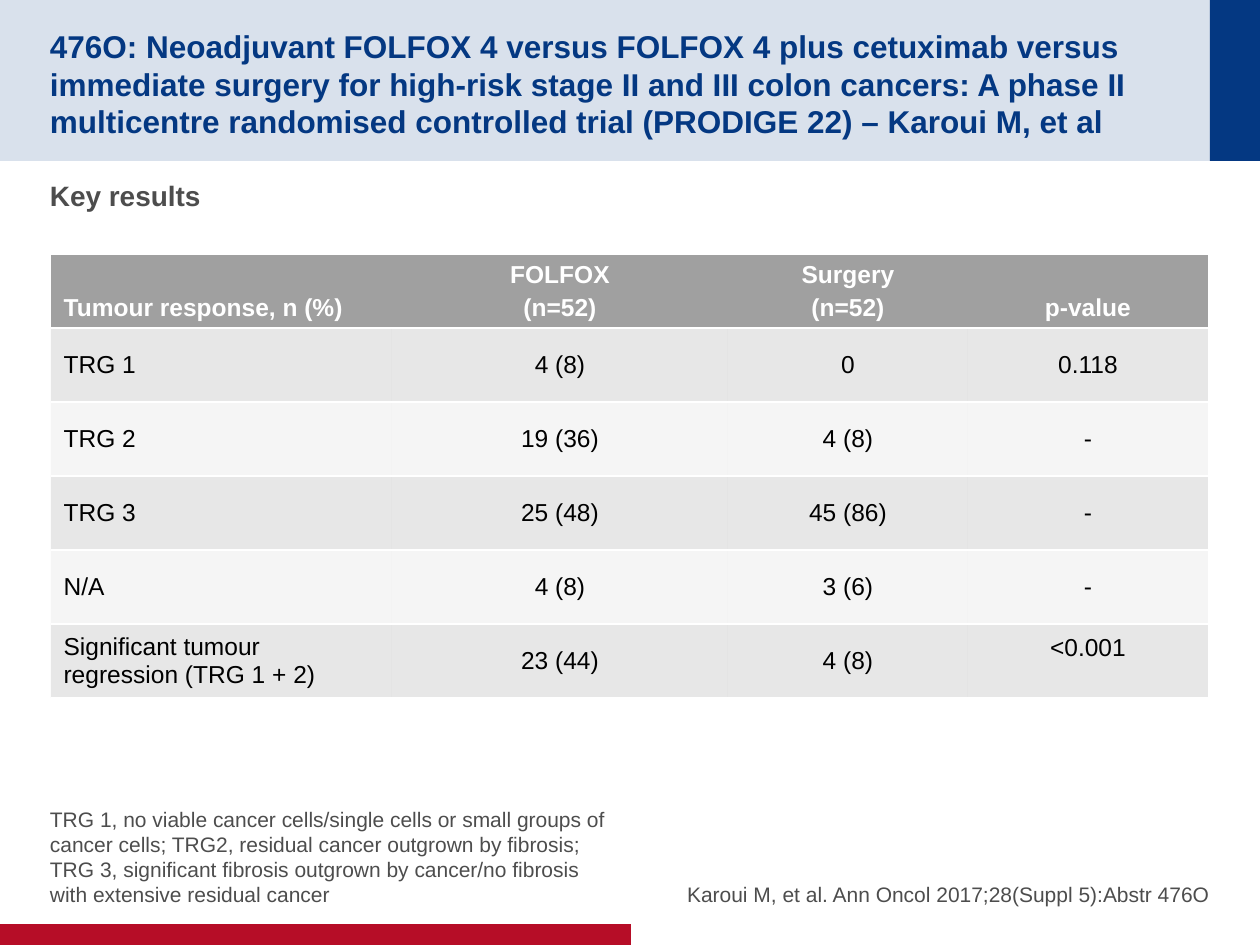
"""Build a slide with the tumour response table of a colon cancer trial."""
from lxml import etree
from pptx import Presentation
from pptx.dml.color import RGBColor
from pptx.enum.shapes import MSO_SHAPE
from pptx.enum.text import MSO_ANCHOR, PP_ALIGN
from pptx.oxml.ns import qn
from pptx.util import Pt

PX = 914400 / 126
FONT = "Arial"
NAVY = RGBColor(0x04, 0x38, 0x82)
RED = RGBColor(0xB6, 0x0D, 0x27)
DARK_GREY = RGBColor(0x4D, 0x4D, 0x4D)
GREY = RGBColor(0xA0, 0xA0, 0xA0)
WHITE = RGBColor(0xFF, 0xFF, 0xFF)
BLACK = RGBColor(0x00, 0x00, 0x00)
RECTANGLE = MSO_SHAPE.RECTANGLE
TOP, MIDDLE, BOTTOM = MSO_ANCHOR.TOP, MSO_ANCHOR.MIDDLE, MSO_ANCHOR.BOTTOM
LEFT, CENTER, RIGHT = PP_ALIGN.LEFT, PP_ALIGN.CENTER, PP_ALIGN.RIGHT
NO_GRID_STYLE = "{2D5ABB26-0587-4C30-8999-92F81FD0307C}"

BANDS = [
    ((0, 0, 1260, 161), NAVY, 15),
    ((1210, 0, 50, 161), NAVY, 100),
    ((0, 924, 631, 21), RED, 100),
]
TITLE = (
    "476O: Neoadjuvant FOLFOX 4 versus FOLFOX 4 plus cetuximab versus "
    "immediate surgery for high-risk stage II and III colon cancers: A phase II "
    "multicentre randomised controlled trial (PRODIGE 22) – Karoui M, et al"
)
FOOTNOTE = (
    "TRG 1, no viable cancer cells/single cells or small groups of cancer cells; "
    "TRG2, residual cancer outgrown by fibrosis; TRG 3, significant fibrosis "
    "outgrown by cancer/no fibrosis with extensive residual cancer"
)
CITATION = "Karoui M, et al. Ann Oncol 2017;28(Suppl 5):Abstr 476O"
# text, box, size, colour, bold, alignment, anchor, top and bottom inset
TEXTS = [
    ("Key results", (50, 173, 1159, 654), 16, DARK_GREY, True, LEFT, TOP, (6, 6)),
    (TITLE, (50, 25, 1135, 111), 18, NAVY, True, LEFT, MIDDLE, (6, 0)),
    (CITATION, (640, 840, 570, 67), 12, DARK_GREY, False, RIGHT, BOTTOM, (0, 0)),
    (FOOTNOTE, (50, 840, 570, 67), 12, DARK_GREY, False, LEFT, BOTTOM, (0, 0)),
]
TABLE = [
    ["Tumour response, n (%)", "FOLFOX\n(n=52)", "Surgery\n(n=52)", "p-value"],
    ["TRG 1", "4 (8)", "0", "0.118"],
    ["TRG 2", "19 (36)", "4 (8)", "-"],
    ["TRG 3", "25 (48)", "45 (86)", "-"],
    ["N/A", "4 (8)", "3 (6)", "-"],
    ["Significant tumour regression (TRG 1 + 2)", "23 (44)", "4 (8)", "<0.001"],
]
TABLE_LEFT, TABLE_TOP, ROW_HEIGHT = 51, 254, 74
COLUMN_WIDTHS = [341, 336, 240, 240]
RAISED_BOTTOM_MARGIN = 32


def px(value):
    return round(value * PX)


def set_fill(owner, color, opacity):
    owner.fill.solid()
    owner.fill.fore_color.rgb = color
    if opacity < 100:
        element = owner._tc if hasattr(owner, "_tc") else owner._element
        color_element = next(element.iter(qn("a:srgbClr")))
        etree.SubElement(color_element, qn("a:alpha"), val=str(opacity * 1000))


def add_run(paragraph, text, size, color, bold, alignment):
    paragraph.alignment = alignment
    run = paragraph.add_run()
    run.text = text
    run.font.name = FONT
    run.font.size = Pt(size)
    run.font.bold = bold
    run.font.color.rgb = color


def add_band(slide, box, color, opacity):
    shape = slide.shapes.add_shape(RECTANGLE, *map(px, box))
    shape.shadow.inherit = False
    set_fill(shape, color, opacity)
    shape.line.fill.background()


def add_text(slide, text, box, size, color, bold, alignment, anchor, insets):
    frame = slide.shapes.add_textbox(*map(px, box)).text_frame
    frame.word_wrap = True
    frame.vertical_anchor = anchor
    frame.margin_left = frame.margin_right = 0
    frame.margin_top, frame.margin_bottom = map(px, insets)
    add_run(frame.paragraphs[0], text, size, color, bold, alignment)


def add_cell_borders(cell):
    properties = cell._tc.get_or_add_tcPr()
    for index, side in enumerate(("a:lnT", "a:lnB")):
        line = etree.Element(qn(side), w=str(Pt(1)))
        fill = etree.SubElement(line, qn("a:solidFill"))
        etree.SubElement(fill, qn("a:srgbClr"), val=str(WHITE))
        properties.insert(index, line)


def fill_cell(cell, text, row, column):
    header = row == 0
    set_fill(cell, GREY, 100 if header else 25 if row % 2 else 10)
    add_cell_borders(cell)
    cell.vertical_anchor = BOTTOM if header else MIDDLE
    if header:
        cell.margin_top = 0
    if text.startswith("<"):
        cell.margin_bottom = px(RAISED_BOTTOM_MARGIN)
    frame = cell.text_frame
    for index, line in enumerate(text.split("\n")):
        paragraph = frame.add_paragraph() if index else frame.paragraphs[0]
        paragraph.space_before = Pt(2.8)
        add_run(paragraph, line, 14, WHITE if header else BLACK, header,
                CENTER if column else LEFT)


def add_response_table(slide):
    box = (TABLE_LEFT, TABLE_TOP, sum(COLUMN_WIDTHS), ROW_HEIGHT * len(TABLE))
    table = slide.shapes.add_table(len(TABLE), len(COLUMN_WIDTHS), *map(px, box)).table
    next(table._tbl.iter(qn("a:tableStyleId"))).text = NO_GRID_STYLE
    for column, width in zip(table.columns, COLUMN_WIDTHS):
        column.width = px(width)
    for row, texts in enumerate(TABLE):
        table.rows[row].height = px(ROW_HEIGHT)
        for column, text in enumerate(texts):
            fill_cell(table.cell(row, column), text, row, column)


def main():
    presentation = Presentation()
    presentation.slide_width = px(1260)
    presentation.slide_height = px(945)
    slide = presentation.slides.add_slide(presentation.slide_layouts[6])
    for band in BANDS:
        add_band(slide, *band)
    for text in TEXTS[:2]:
        add_text(slide, *text)
    add_response_table(slide)
    for text in TEXTS[2:]:
        add_text(slide, *text)
    presentation.save("out.pptx")


if __name__ == "__main__":
    main()
